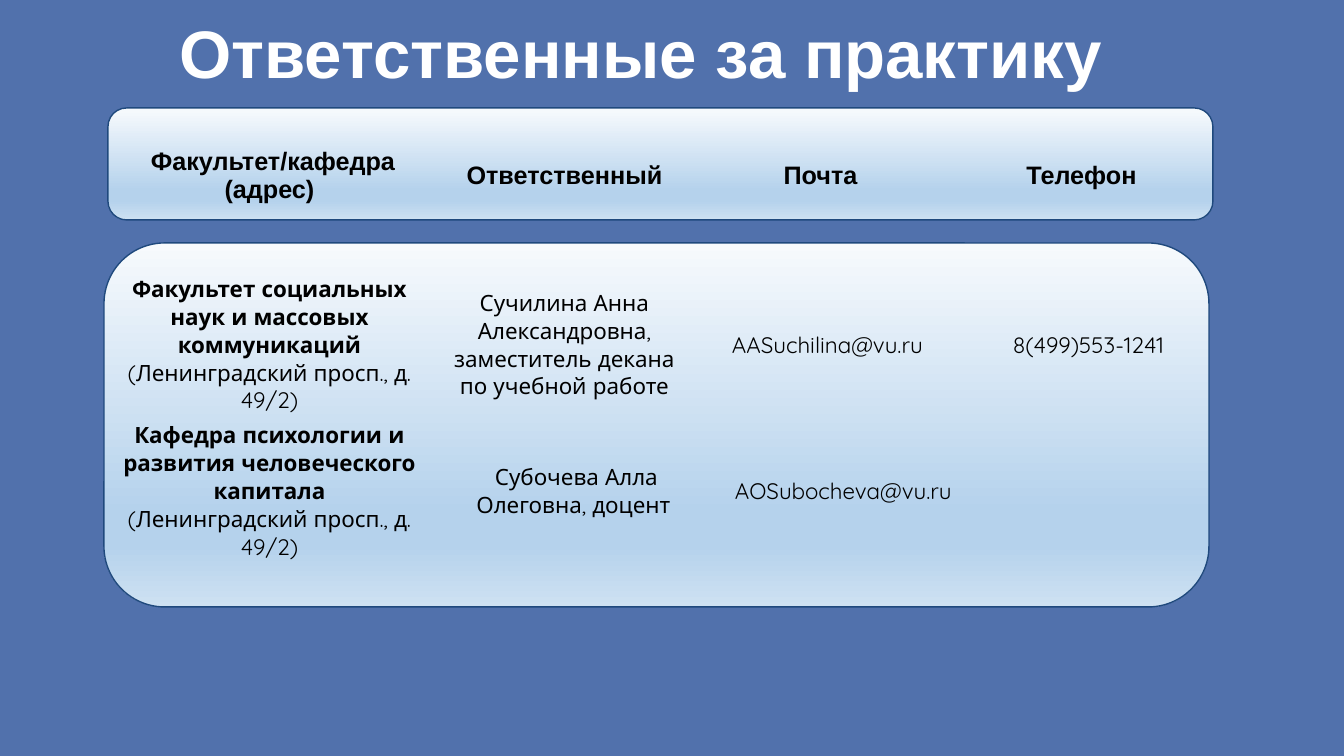
import copy
from dataclasses import dataclass

import pptx
import pptx.dml.color
import pptx.enum.shapes
import pptx.enum.text
import pptx.oxml.ns
import pptx.util


@dataclass(frozen=True)
class Theme:
    background: str = "5171AC"
    outline: str = "1F497D"
    title_color: str = "FFFFFF"
    text_color: str = "000000"
    gradient: tuple = ((0, "F7FAFD"), (0.74, "B5D2EC"), (0.83, "B5D2EC"), (1, "CEE1F2"))
    heading_font: str = "Arial"
    body_font: str = "Quicksand"
    title_size: int = 48
    header_size: int = 18
    body_size: int = 16
    plain_table: str = "{2D5ABB26-0587-4C30-8999-92F81FD0307C}"


def px(length):
    return round(length * 914400 / 100.8)


def rgb(color):
    return pptx.dml.color.RGBColor.from_string(color)


def apply(target, values):
    for name, value in values.items():
        setattr(target, name, value)


class ContactSlide:
    def __init__(self, presentation, theme):
        self.theme = theme
        self.slide = presentation.slides.add_slide(presentation.slide_layouts[5])
        backdrop = self.slide.background.fill
        backdrop.solid()
        backdrop.fore_color.rgb = rgb(theme.background)

    def style_run(self, run, font, size, color, bold):
        apply(run.font, {"name": font, "size": pptx.util.Pt(size), "bold": bold})
        run.font.color.rgb = rgb(color)

    def title(self, text, left, top, width, height):
        heading = self.slide.shapes.title
        apply(heading, {"left": px(left), "top": px(top),
                        "width": px(width), "height": px(height)})
        frame = heading.text_frame
        apply(frame, {
            "text": text,
            "word_wrap": True,
            "auto_size": pptx.enum.text.MSO_AUTO_SIZE.NONE,
            "vertical_anchor": pptx.enum.text.MSO_ANCHOR.MIDDLE,
            **{f"margin_{side}": px(10) for side in ("left", "top", "right", "bottom")},
        })
        paragraph = frame.paragraphs[0]
        apply(paragraph, {"alignment": pptx.enum.text.PP_ALIGN.LEFT, "line_spacing": 0.9})
        self.style_run(paragraph.runs[0], self.theme.heading_font,
                       self.theme.title_size, self.theme.title_color, True)

    def panel(self, left, top, width, height):
        panel = self.slide.shapes.add_shape(
            pptx.enum.shapes.MSO_SHAPE.ROUNDED_RECTANGLE,
            px(left), px(top), px(width), px(height))
        panel.shadow.inherit = False
        panel.line.color.rgb = rgb(self.theme.outline)
        panel.line.width = pptx.util.Pt(1)
        panel.fill.gradient()
        panel.fill.gradient_angle = 270
        stop_list = panel._element.spPr.find(".//" + pptx.oxml.ns.qn("a:gsLst"))
        while len(stop_list) < len(self.theme.gradient):
            stop_list.append(copy.deepcopy(stop_list[0]))
        for stop, (position, color) in zip(panel.fill.gradient_stops, self.theme.gradient):
            stop.position = position
            stop.color.rgb = rgb(color)

    def table(self, left, top, columns, heights, contents, font, size):
        frame = self.slide.shapes.add_table(
            len(heights), len(columns), px(left), px(top),
            px(sum(columns)), px(sum(heights)))
        table = frame.table
        apply(table, {"first_row": False, "horz_banding": False})
        style_id = table._tbl.tblPr.find(pptx.oxml.ns.qn("a:tableStyleId"))
        style_id.text = self.theme.plain_table
        for column, width in zip(table.columns, columns):
            column.width = px(width)
        for row, height in zip(table.rows, heights):
            row.height = px(height)
        for cell in table.iter_cells():
            cell.fill.background()
            apply(cell, {
                "vertical_anchor": pptx.enum.text.MSO_ANCHOR.MIDDLE,
                **{f"margin_{side}": px(10) for side in ("left", "top", "right", "bottom")},
            })
        for cell, lines in zip(table.iter_cells(), contents):
            cell.text_frame.text = "\n".join(text for text, bold in lines)
            for paragraph, (text, bold) in zip(cell.text_frame.paragraphs, lines):
                paragraph.alignment = pptx.enum.text.PP_ALIGN.CENTER
                self.style_run(paragraph.runs[0], font, size, self.theme.text_color, bold)


def main():
    presentation = pptx.Presentation()
    apply(presentation, {"slide_width": px(1344), "slide_height": px(756)})
    theme = Theme()
    contacts = ContactSlide(presentation, theme)

    contacts.title("Ответственные за практику", 169, 12, 1132, 90)
    contacts.panel(104, 243, 1105, 364)
    contacts.panel(108, 108, 1105, 112)

    contacts.table(104, 113, (331, 259, 253, 269), (125, 48), (
        ((" Факультет/кафедра", True), ("(адрес)", True)),
        (("Ответственный", True),),
        (("Почта", True),),
        (("Телефон", True),),
    ), theme.heading_font, theme.header_size)

    address = ("(Ленинградский просп., д. 49/2)", False)
    departments = (
        (265, 154, (331, 259, 267, 255),
         "Факультет социальных наук и массовых коммуникаций",
         ("Сучилина Анна Александровна, заместитель декана по учебной работе",
          "AASuchilina@vu.ru", "8(499)553-1241")),
        (408, 166, (331, 283, 257, 242),
         "Кафедра психологии и развития человеческого капитала",
         ("Субочева Алла Олеговна, доцент ", "AOSubocheva@vu.ru ")),
    )
    for top, height, columns, department, details in departments:
        contents = [((department, True), address)]
        contents += [((detail, False),) for detail in details]
        contacts.table(104, top, columns, (height,), contents,
                       theme.body_font, theme.body_size)

    presentation.save("out.pptx")


if __name__ == "__main__":
    main()
